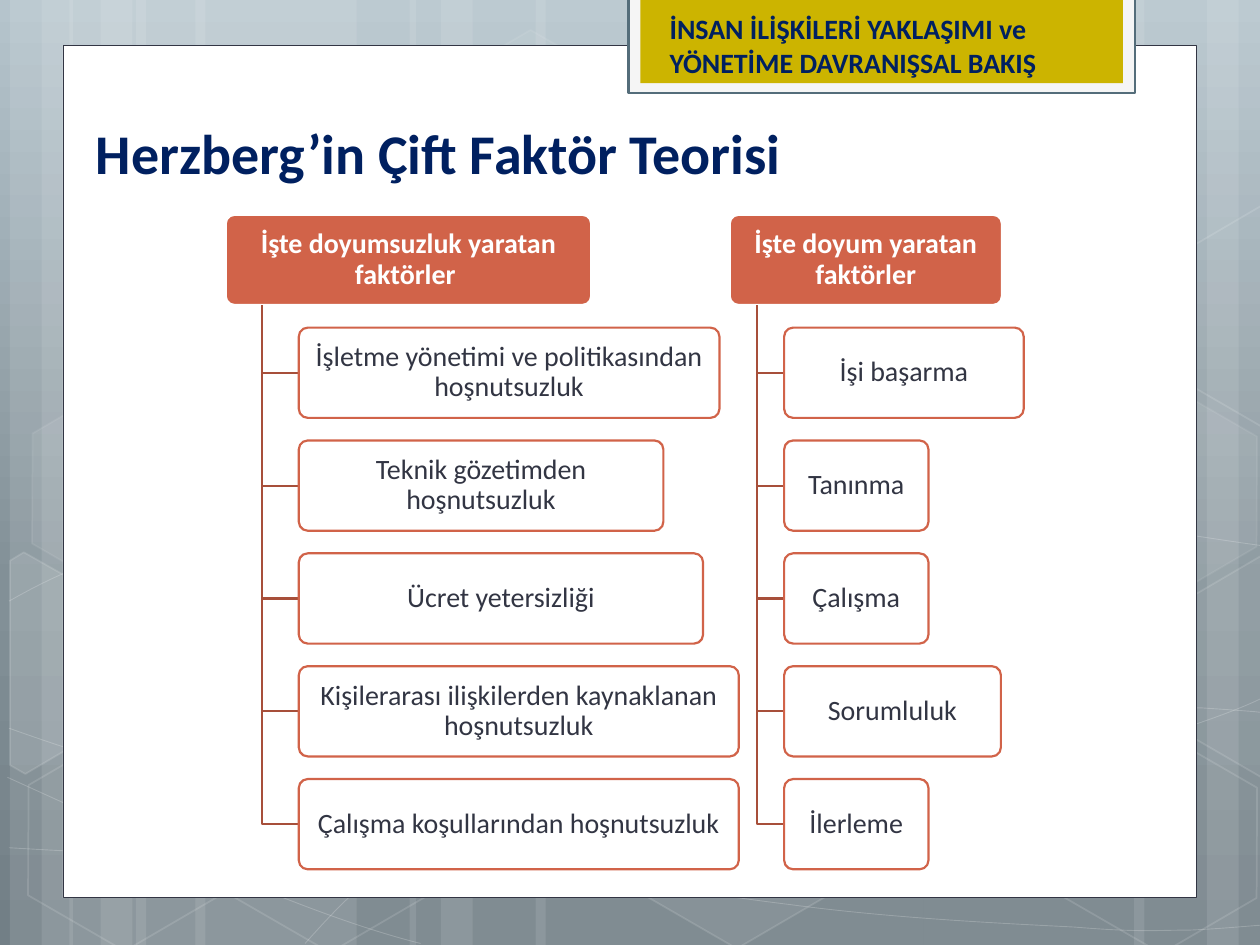
from copy import deepcopy
from math import cos, radians, sin

from lxml import etree
from pptx import Presentation
from pptx.dml import color as col
from pptx.enum import shapes as sh, text as tx
from pptx.oxml import ns
from pptx.util import Cm, Pt

HUE = {
    "sky": "B5C4CC", "slate": "829097", "deep": "727F86", "white": "FFFFFF",
    "edge": "323543", "frame": "F5F5F5", "steel": "546D7A", "gold": "CCB400",
    "navy": "002060", "brick": "D16349", "rust": "A74F3A",
}
KIND = sh.MSO_SHAPE
TILT = 30

# Left edge, width and turn of each pale band
BANDS = [
    (2.74, 4.45, 0), (0.2, 1.27, 0), (0.84, 2.11, 0), (3.94, 4.45, 0),
    (1.4, 1.27, 0), (2.03, 2.11, 0), (18.62, 4.45, 180), (24.33, 1.27, 180),
    (22.86, 2.11, 180), (10.8, 7.82, 0), (8.26, 1.27, 0), (8.89, 2.11, 0),
]
# Bezier curves: a start, then three points for each segment
CURVES = [
    [(0.18, 17.09), (1.55, 17.17), (2.92, 17.25), (4.83, 17.22), (6.73, 17.2),
     (9.09, 17.15), (11.63, 16.89), (14.17, 16.64), (17.78, 16.15), (20.12, 15.67),
     (22.43, 15.19), (24.82, 14.43), (25.58, 14)],
    [(0.18, 12.12), (0.91, 11.71), (1.65, 11.33), (3.07, 10.95), (4.52, 10.57),
     (6.58, 10.01), (8.81, 9.83), (11.07, 9.65), (13.82, 9.63), (16.61, 9.83),
     (19.41, 10.03), (24.05, 10.82), (25.58, 11.02)],
    [(0.15, 15.67), (3.23, 17.07), (6.27, 18.47), (8.48, 19.02)],
    [(0.18, 14.68), (0.97, 14.96), (1.78, 15.24), (3.25, 15.65), (4.72, 16.03),
     (6.93, 16.66), (9.07, 17.09), (11.18, 17.53), (13.84, 17.98), (15.95, 18.24),
     (18.06, 18.52), (20.32, 18.62), (21.67, 18.69), (22.99, 18.8), (23.34, 18.75),
     (24, 18.75), (24.66, 18.72), (25.12, 18.67), (25.58, 18.64)],
    [(6.15, 19.02), (6.6, 18.52), (7.06, 18.01), (7.67, 17.55), (8.28, 17.09),
     (9.14, 16.59), (9.86, 16.23), (10.57, 15.88), (11, 15.72), (11.94, 15.47),
     (12.85, 15.21), (14.55, 14.86), (15.44, 14.68), (16.36, 14.5), (16.48, 14.5),
     (17.27, 14.45), (18.06, 14.38), (19.3, 14.3), (20.17, 14.27), (21.06, 14.25),
     (22.5, 14.27), (22.5, 14.27), (23.07, 14.27), (23.64, 14.27), (24.21, 14.27),
     (24.66, 14.3), (25.1, 14.33), (25.32, 14.35), (25.55, 14.38), (25.48, 14.35),
     (25.55, 14.38)],
]
# Left, top, fill opacity and line opacity
HEXES = [
    (8.48, 0.91, 4, 8), (12.62, 14.96, 6, 12), (0.28, 15.01, 0, 12),
    (0.36, 7.92, 7, 8), (4.42, 15.04, 0, 12), (19.13, 11.51, 10, 12),
    (21.18, 15.06, 0, 12), (21.18, 7.98, 7, 8),
]
# Hexagons cut by the slide edge: fill opacity, pivot and corners
CUTS = [
    (10, (0.91, 13.59), [(0.2, 11.3), (0.48, 11.13), (2.44, 12.24), (2.41, 14.48),
                         (0.51, 15.6), (0.2, 15.42)]),
    (4, (25.02, 13.21), [(23.52, 12.32), (25.43, 11.2), (25.63, 11.33),
                         (25.63, 15.57), (25.45, 15.67), (23.52, 14.55)]),
    (0, (25.02, 6.12), [(23.52, 5.26), (25.43, 4.14), (25.65, 4.27),
                        (25.63, 8.51), (25.45, 8.61), (23.52, 7.49)]),
]
# Left and width of the head, its label, then leaf labels and widths
TREES = [
    (4.55, 7.37, "İşte doyumsuzluk yaratan faktörler ", [
        ("İşletme yönetimi ve politikasından hoşnutsuzluk", 8.48),
        ("Teknik gözetimden hoşnutsuzluk", 7.35), ("Ücret yetersizliği", 8.15),
        ("Kişilerarası ilişkilerden kaynaklanan hoşnutsuzluk", 8.87),
        ("Çalışma koşullarından hoşnutsuzluk", 8.87)]),
    (14.71, 5.49, "İşte doyum yaratan faktörler", [
        ("İşi başarma", 4.83), ("Tanınma", 2.91), ("Çalışma", 2.91),
        ("Sorumluluk", 4.37), ("İlerleme", 2.91)]),
]


def rgb(name):
    return col.RGBColor.from_string(HUE[name])


def fade(part, where, pct):
    mark = part.element.spPr.find(where + "/" + ns.qn("a:srgbClr"))
    etree.SubElement(mark, ns.qn("a:alpha"), val=str(pct * 1000))


def paint(part, fill=None, line=None, wide=1, clear=100, faint=100):
    """Set fill and line; clear and faint are their opacities in percent."""
    part.shadow.inherit = False
    solid = ns.qn("a:solidFill")
    part.fill.background()
    part.line.fill.background()
    if fill and clear:
        part.fill.solid()
        part.fill.fore_color.rgb = rgb(fill)
        if clear < 100:
            fade(part, solid, clear)
    if line:
        part.line.color.rgb = rgb(line)
        part.line.width = Pt(wide)
        if faint < 100:
            fade(part, ns.qn("a:ln") + "/" + solid, faint)
    return part


def block(host, kind, x, y, w, h, **look):
    return paint(host.shapes.add_shape(kind, Cm(x), Cm(y), Cm(w), Cm(h)), **look)


def trace(host, dots, close=False, **look):
    dots = [(Cm(x), Cm(y)) for x, y in dots]
    pen = host.shapes.build_freeform(*dots[0])
    pen.add_line_segments(dots[1:], close=close)
    return paint(pen.convert_to_shape(), **look)


def bend(part):
    """Turn each three line steps into one cubic Bezier segment."""
    track = part.element.find(".//" + ns.qn("a:path"))
    steps = track.findall(ns.qn("a:lnTo"))
    for i in range(0, len(steps), 3):
        curve = etree.SubElement(track, ns.qn("a:cubicBezTo"))
        for step in steps[i:i + 3]:
            curve.append(step[0])
            track.remove(step)


def spin(dot, mid, deg):
    dx, dy, arc = dot[0] - mid[0], dot[1] - mid[1], radians(deg)
    return (mid[0] + dx * cos(arc) - dy * sin(arc),
            mid[1] + dx * sin(arc) + dy * cos(arc))


def write(frame, label, size, hue, bold=True):
    frame.word_wrap = True
    para = frame.paragraphs[0]
    para.text = label
    font = para.font
    font.name, font.size, font.bold = "Calibri", Pt(size), bold
    font.color.rgb = rgb(hue)
    return para


def caption(host, x, y, w, h, label, size):
    frame = host.shapes.add_textbox(Cm(x), Cm(y), Cm(w), Cm(h)).text_frame
    frame.auto_size = tx.MSO_AUTO_SIZE.SHAPE_TO_FIT_TEXT
    write(frame, label, size, "navy")


def node(host, x, y, w, h, label, hue, bold, **look):
    part = block(host, KIND.ROUNDED_RECTANGLE, x, y, w, h, wide=1.25, **look)
    part.adjustments[0] = 0.1
    frame = part.text_frame
    frame.margin_left = frame.margin_right = Cm(0.13)
    frame.margin_top = frame.margin_bottom = Cm(0.1)
    frame.vertical_anchor = tx.MSO_ANCHOR.MIDDLE
    para = write(frame, label, 16, hue, bold)
    para.alignment, para.line_spacing = tx.PP_ALIGN.CENTER, 0.9


def scene(slide, high):
    # Three-stop gradient from top to bottom
    fill = slide.background.fill
    fill.gradient()
    fill.gradient_angle = 270
    stops = slide.element.find(".//" + ns.qn("a:gsLst"))
    stops.append(deepcopy(stops[-1]))
    looks = ((0, "sky"), (0.62, "slate"), (1, "deep"))
    for stop, (at, hue) in zip(fill.gradient_stops, looks):
        stop.position, stop.color.rgb = at, rgb(hue)
    # Bands, curves and hexagons
    host = slide.shapes.add_group_shape()
    for x, w, turn in BANDS:
        block(host, KIND.RECTANGLE, x, 0, w, high, fill="white", clear=10).rotation = turn
    for knots in CURVES:
        bend(trace(host, knots, line="white", wide=0.5, faint=20))
    for x, y, clear, faint in HEXES:
        part = block(host, KIND.HEXAGON, x, y, 4.45, 3.86, fill="white",
                     clear=clear, line="white", faint=faint)
        part.adjustments[0], part.rotation = 0.285, TILT
    for clear, mid, dots in CUTS:
        flat = [spin(dot, mid, -TILT) for dot in dots]
        trace(host, flat, True, fill="white", clear=clear, line="white",
              faint=12).rotation = TILT


def banner(slide, x, y, w, h):
    block(slide, KIND.RECTANGLE, x, y, w, h, fill="frame", line="steel", wide=1.25)
    block(slide, KIND.RECTANGLE, x + 0.24, y, w - 0.48, h - 0.2, fill="gold")
    caption(slide, x + 0.58, y + 0.16, w - 0.56, h - 0.3,
            "İNSAN İLİŞKİLERİ YAKLAŞIMI ve YÖNETİME DAVRANIŞSAL BAKIŞ", 16)


def tree(host, x, y, w, h, head, leaves):
    node(host, x, y, w, h, head, "white", True, fill="brick", line="white")
    spine, left = x + w * 0.1, x + w * 0.2
    for row, (label, wide) in enumerate(leaves, 1):
        top = y + row * h * 1.25
        mid = top + h / 2
        trace(host, [(spine, y + h), (spine, mid), (left, mid)], line="rust", wide=1.25)
        node(host, left, top, wide, h, label, "edge", False,
             fill="white", clear=90, line="brick")


deck = Presentation()
deck.slide_width, deck.slide_height = Cm(25.4), Cm(19.05)
page = deck.slides.add_slide(deck.slide_layouts[6])
scene(page, 19.05)
block(page, KIND.RECTANGLE, 1.27, 0.91, 22.86, 17.19, fill="white", line="edge", wide=0.5)
banner(page, 12.67, -0.05, 10.21, 1.93)
caption(page, 1.68, 2.26, 18.59, 1.63, "Herzberg’in Çift Faktör Teorisi", 32)
chart = page.shapes.add_group_shape()
for x, w, head, leaves in TREES:
    tree(chart, x, 4.33, w, 1.82, head, leaves)
deck.save("out.pptx")
